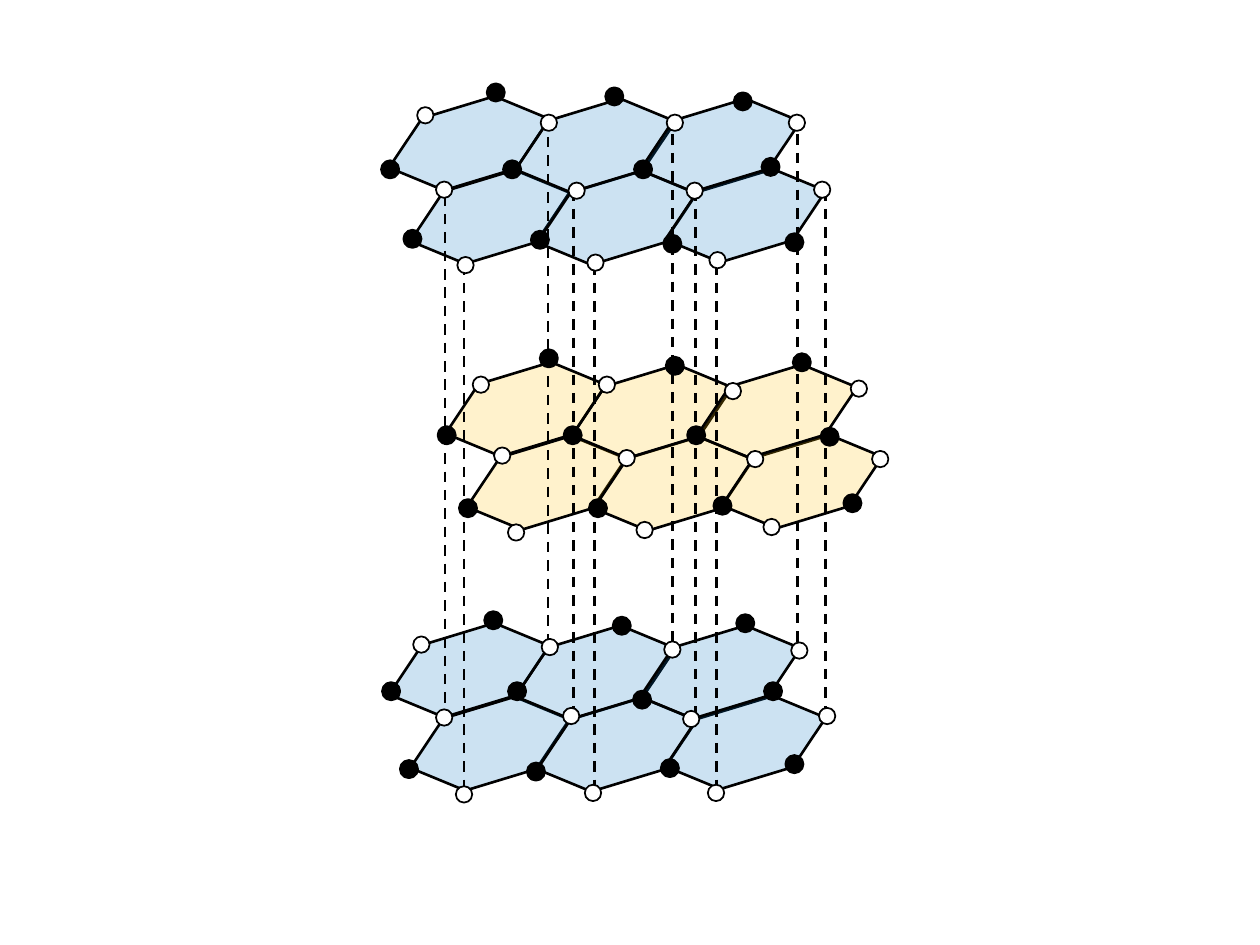
from dataclasses import dataclass

import pptx
import pptx.dml.color
import pptx.enum.dml
import pptx.enum.shapes
import pptx.oxml.ns
import pptx.util
from lxml import etree
from pptx.util import Cm, Pt

SHAPE = pptx.enum.shapes.MSO_SHAPE
Point = tuple[float, float]

BLACK, WHITE = "000000", "FFFFFF"
BLUE, AMBER = "0070C0", "FFC000"
RING_WIDTH, RING_HEIGHT, RING_TILT = 3.38, 1.52, 343.1
ATOM_SIZE = 0.33
REPEAT_HEIGHT = 10.62  # distance between the two aligned layers


@dataclass(frozen=True)
class Layer:
    """One sheet of six rings with the upper-left corners of its atoms, in cm."""
    offset: Point
    tint: str
    black_atoms: list[Point]
    white_atoms: list[Point]


# Rings of one layer, from back to front
RINGS = [(10.31, 2.18), (7.77, 2.13), (12.83, 2.18),
         (10.74, 3.63), (8.2, 3.61), (13.34, 3.58)]

TOP = Layer(
    (0, 0), BLUE,
    [(9.83, 1.7), (12.22, 1.78), (14.81, 1.88),
     (7.7, 3.25), (10.16, 3.25), (12.8, 3.25), (15.37, 3.2),
     (8.15, 4.65), (10.72, 4.67), (13.39, 4.75), (15.85, 4.72)],
    [(8.41, 2.16), (10.9, 2.31), (13.44, 2.31), (15.9, 2.31),
     (8.79, 3.66), (11.46, 3.68), (13.84, 3.68), (16.41, 3.66),
     (9.22, 5.18), (11.84, 5.13), (14.3, 5.08)])
MIDDLE = Layer(
    (1.14, 5.36), AMBER,
    [(10.9, 7.06), (13.44, 7.21), (16, 7.14),
     (8.84, 8.61), (11.38, 8.61), (13.87, 8.61), (16.56, 8.64),
     (9.27, 10.08), (11.89, 10.08), (14.4, 10.03), (17.02, 9.98)],
    [(9.53, 7.59), (12.07, 7.59), (14.61, 7.72), (17.15, 7.67),
     (9.96, 9.02), (12.47, 9.07), (15.06, 9.09), (17.58, 9.09),
     (10.24, 10.57), (12.83, 10.52), (15.39, 10.46)])
BOTTOM = Layer(
    (0, REPEAT_HEIGHT), BLUE,
    [(9.78, 12.34), (12.37, 12.45), (14.86, 12.4),
     (7.72, 13.77), (10.26, 13.77), (12.78, 13.94), (15.42, 13.77),
     (8.08, 15.34), (10.64, 15.39), (13.34, 15.32), (15.85, 15.24)],
    [(8.33, 12.83), (10.92, 12.88), (13.39, 12.93), (15.95, 12.95),
     (8.79, 14.3), (11.35, 14.27), (13.77, 14.33), (16.51, 14.27),
     (9.19, 15.85), (11.79, 15.82), (14.27, 15.82)])
LAYERS = [TOP, BOTTOM, MIDDLE]

# Upper ends of the dashed lines joining the top and bottom layers
ALIGNMENTS = [(16.64, 3.84), (16.08, 2.34), (14.45, 5.33), (14.02, 3.84),
              (13.56, 2.34), (11.99, 5.33), (11.56, 3.84), (11.05, 2.39),
              (9.35, 5.33), (8.97, 3.94)]


def paint(target, color: str) -> None:
    """Give a fill or a line one solid colour."""
    fill = getattr(target, "fill", target)
    fill.solid()
    fill.fore_color.rgb = pptx.dml.color.RGBColor.from_string(color)


def draw_shape(slide, kind, corner: Point, size: Point, color: str, line_pt: float):
    shape = slide.shapes.add_shape(kind, *map(Cm, corner + size))
    shape.shadow.inherit = False
    paint(shape.fill, color)
    paint(shape.line, BLACK)
    shape.line.width = Pt(line_pt)
    return shape


def draw_ring(slide, corner: Point, tint: str) -> None:
    ring = draw_shape(slide, SHAPE.HEXAGON, corner, (RING_WIDTH, RING_HEIGHT), tint, 1.5)
    ring.rotation = RING_TILT
    ring.adjustments[0] = 0.61
    tint_color = ring.fill._xPr.find(".//" + pptx.oxml.ns.qn("a:srgbClr"))
    etree.SubElement(tint_color, pptx.oxml.ns.qn("a:alpha"), val="20000")


def draw_alignment(slide, upper_end: Point) -> None:
    x, y = upper_end
    alignment = slide.shapes.add_connector(
        pptx.enum.shapes.MSO_CONNECTOR.STRAIGHT,
        Cm(x), Cm(y), Cm(x), Cm(y + REPEAT_HEIGHT))
    paint(alignment.line, BLACK)
    alignment.line.width = Pt(1.5)
    alignment.line.dash_style = pptx.enum.dml.MSO_LINE.DASH
    etree.SubElement(alignment._element.spPr, pptx.oxml.ns.qn("a:effectLst"))


def draw_atoms(slide, corners: list[Point], color: str, line_pt: float) -> None:
    for corner in corners:
        draw_shape(slide, SHAPE.OVAL, corner, (ATOM_SIZE, ATOM_SIZE), color, line_pt)


def main() -> None:
    deck = pptx.Presentation()
    deck.slide_width, deck.slide_height = Cm(25.4), Cm(19.05)
    slide = deck.slides.add_slide(deck.slide_layouts[6])

    # Tinted rings of the three layers
    for layer in LAYERS:
        dx, dy = layer.offset
        for x, y in RINGS:
            draw_ring(slide, (x + dx, y + dy), layer.tint)

    # Dashed lines between matching atoms
    for upper_end in ALIGNMENTS:
        draw_alignment(slide, upper_end)

    # Atoms in front
    for layer in LAYERS:
        draw_atoms(slide, layer.black_atoms, BLACK, 2)
        draw_atoms(slide, layer.white_atoms, WHITE, 1)

    deck.save("out.pptx")


if __name__ == "__main__":
    main()
